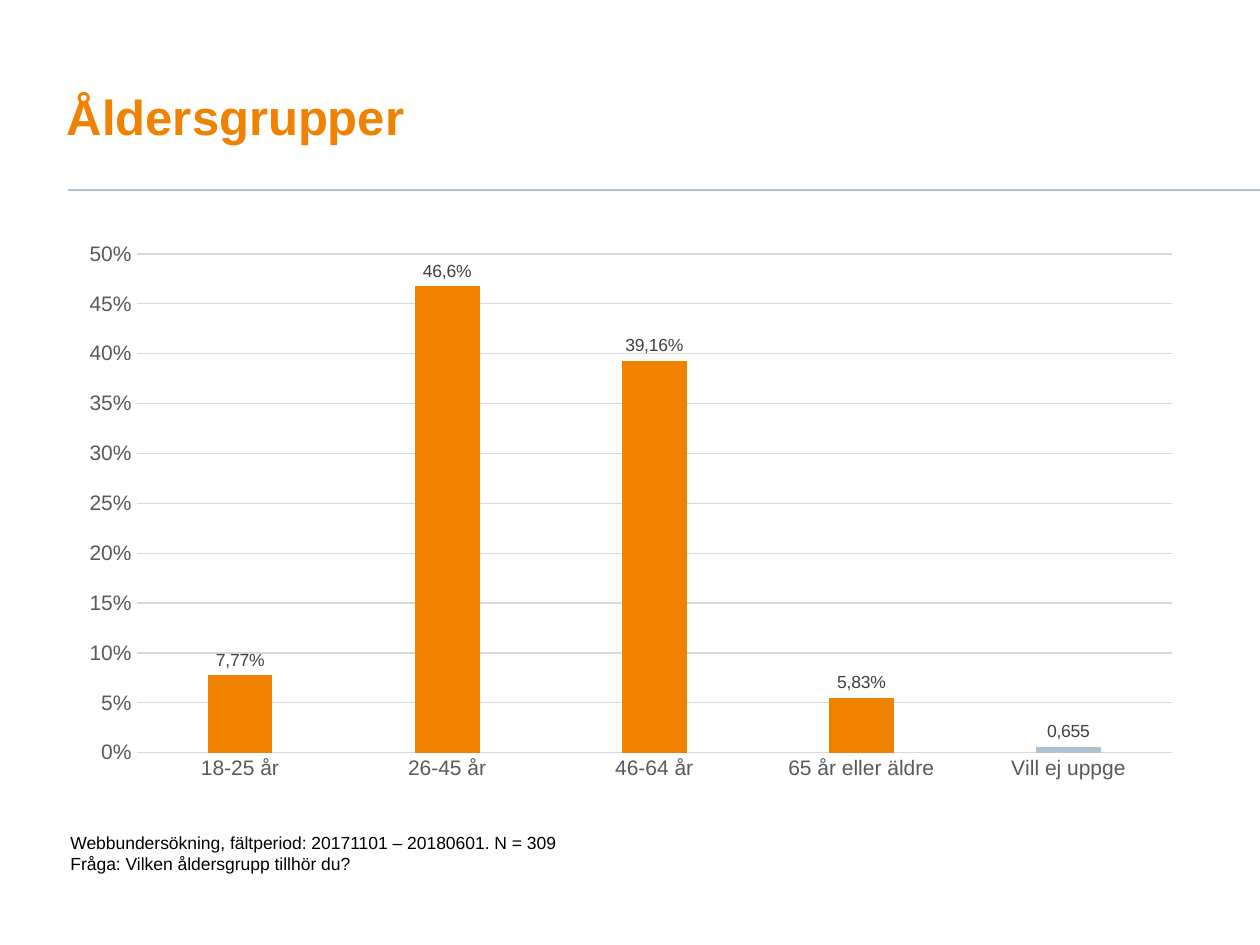
"""Build a slide with a column chart of respondents by age group."""
from lxml import etree
from pptx import Presentation
from pptx import util as u
from pptx.chart import data as cd
from pptx.dml import color
from pptx.enum import chart as ch
from pptx.enum import shapes, text
from pptx.oxml import ns

THEME = {
    "font": "Arial",
    "orange": "EF8200", "blue": "AEC1CF", "black": "000000",
    "axis": "595959", "label": "404040", "grid": "D9D9D9",
    "title_pt": 28, "axis_pt": 12, "small_pt": 10,
}
GROUPS = [
    ("18-25 år", 0.078, "7,77%", "orange"),
    ("26-45 år", 0.468, "46,6%", "orange"),
    ("46-64 år", 0.393, "39,16%", "orange"),
    ("65 år eller äldre", 0.055, "5,83%", "orange"),
    ("Vill ej uppge", 0.006, "0,655", "blue"),
]
NOTES = [
    "Webbundersökning, fältperiod: 20171101 – 20180601. N = 309",
    "Fråga: Vilken åldersgrupp tillhör du?",
]


def apply(obj, values):
    for name, value in values.items():
        setattr(obj, name, value)


def style(font, size, tone, bold=False):
    apply(font, {"name": THEME["font"], "size": u.Pt(THEME[size]), "bold": bold})
    font.color.rgb = color.RGBColor.from_string(THEME[tone])


prs = Presentation()
apply(prs, {"slide_width": u.Cm(25.4), "slide_height": u.Cm(19.05)})
s = prs.slides.add_slide(prs.slide_layouts[5])

line = s.shapes.add_connector(
    shapes.MSO_CONNECTOR.STRAIGHT, u.Cm(1.37), u.Cm(3.83), u.Cm(25.4), u.Cm(3.83))
line.line.color.rgb = color.RGBColor.from_string(THEME["blue"])
line.line.width = u.Pt(1)
etree.SubElement(line._element.spPr, ns.qn("a:effectLst"))

title = s.shapes.title
apply(title, {"left": u.Cm(1.35), "top": u.Cm(0.79),
              "width": u.Cm(18.19), "height": u.Cm(2.29)})
tf = title.text_frame
tf.text = "Åldersgrupper"
apply(tf, {"margin_left": 0, "margin_top": 0, "word_wrap": True,
           "auto_size": text.MSO_AUTO_SIZE.NONE,
           "vertical_anchor": text.MSO_ANCHOR.BOTTOM})
p = tf.paragraphs[0]
apply(p, {"alignment": text.PP_ALIGN.LEFT, "line_spacing": 0.9})
style(p.runs[0].font, "title_pt", "orange", True)

data = cd.CategoryChartData(number_format="0.0%")
data.categories = [group[0] for group in GROUPS]
data.add_series("Series 1", [group[1] for group in GROUPS])
chart = s.shapes.add_chart(
    ch.XL_CHART_TYPE.COLUMN_CLUSTERED,
    u.Cm(1.35), u.Cm(4.67), u.Cm(22.73), u.Cm(11.28), data).chart
apply(chart, {"has_legend": False, "has_title": False})
style(chart.font, "small_pt", "black")

cat, val = chart.category_axis, chart.value_axis
for axis in (cat, val):
    apply(axis, {"major_tick_mark": ch.XL_TICK_MARK.NONE,
                 "minor_tick_mark": ch.XL_TICK_MARK.NONE})
    style(axis.tick_labels.font, "axis_pt", "axis")
apply(val, {"minimum_scale": 0, "maximum_scale": 0.5, "major_unit": 0.05,
            "has_major_gridlines": True})
apply(val.tick_labels, {"number_format": "0%", "number_format_is_linked": False})
val.format.line.fill.background()
for rule in (cat.format.line, val.major_gridlines.format.line):
    rule.color.rgb = color.RGBColor.from_string(THEME["grid"])
    rule.width = u.Pt(0.75)

plot = chart.plots[0]
apply(plot, {"gap_width": 219, "overlap": -27, "vary_by_categories": False})
series = plot.series[0]
series.invert_if_negative = False
series.format.fill.solid()
series.format.fill.fore_color.rgb = color.RGBColor.from_string(THEME["blue"])
labels = series.data_labels
apply(labels, {"show_value": True, "number_format": "0.0%",
               "number_format_is_linked": False,
               "position": ch.XL_LABEL_POSITION.OUTSIDE_END})
style(labels.font, "small_pt", "label")
for i, (name, value, caption, tone) in enumerate(GROUPS):
    point = series.points[i]
    point.format.fill.solid()
    point.format.fill.fore_color.rgb = color.RGBColor.from_string(THEME[tone])
    label = point.data_label
    label.position = ch.XL_LABEL_POSITION.OUTSIDE_END
    r = label.text_frame.paragraphs[0].add_run()
    r.text = caption
    style(r.font, "small_pt", "label")

tf = s.shapes.add_textbox(u.Cm(1.17), u.Cm(16.65), u.Cm(20.27), u.Cm(1.12)).text_frame
apply(tf, {"word_wrap": True, "auto_size": text.MSO_AUTO_SIZE.SHAPE_TO_FIT_TEXT})
tf.text = "\n".join(NOTES)
for p in tf.paragraphs:
    style(p.runs[0].font, "small_pt", "black")

prs.save("out.pptx")
